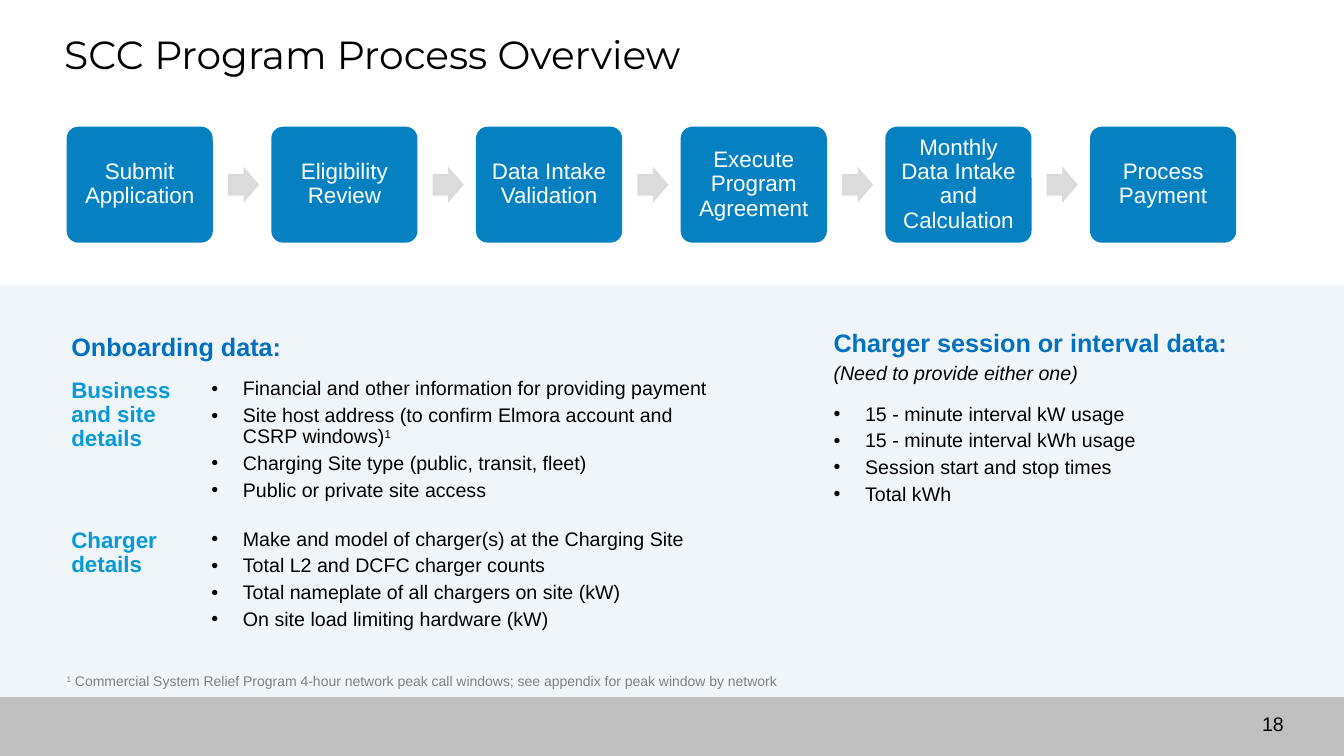
"""Build the SCC program process overview slide."""
from dataclasses import dataclass
from typing import Optional

from lxml import etree
from pptx import Presentation
from pptx.dml.color import RGBColor
from pptx.enum.shapes import MSO_SHAPE
from pptx.enum.text import MSO_ANCHOR, MSO_AUTO_SIZE, PP_ALIGN
from pptx.oxml.ns import qn
from pptx.util import Pt

RECTANGLE = MSO_SHAPE.RECTANGLE
ROUNDED = MSO_SHAPE.ROUNDED_RECTANGLE
RIGHT_ARROW = MSO_SHAPE.RIGHT_ARROW
TOP = MSO_ANCHOR.TOP
MIDDLE = MSO_ANCHOR.MIDDLE
LEFT = PP_ALIGN.LEFT
CENTER = PP_ALIGN.CENTER
NO_FIT = MSO_AUTO_SIZE.NONE


@dataclass(frozen=True)
class Style:
    """Describe the look of a run."""
    size: float
    color: str
    bold: bool = False
    italic: bool = False
    font: str = "Arial"


@dataclass(frozen=True)
class Theme:
    """Hold the colours and type styles of the slide."""
    panel: str = "F0F5F9"
    footer: str = "BFBFBF"
    card: str = "0581C1"
    arrow: str = "DBDBDB"
    title: Style = Style(28, "000000", font="Montserrat")
    step: Style = Style(16, "FFFFFF")
    heading: Style = Style(18, "0070C0", bold=True)
    label: Style = Style(16, "069BD7", bold=True)
    body: Style = Style(14, "000000")
    remark: Style = Style(14, "000000", italic=True)
    footnote: Style = Style(10, "808080")


@dataclass(frozen=True)
class Frame:
    """Give a position and size in points."""
    left: float
    top: float
    width: float
    height: float


@dataclass(frozen=True)
class Block:
    """Describe a text block, with raised text between carets."""
    frame: Frame
    lines: tuple
    styles: tuple
    bulleted: bool = False
    holder: Optional[int] = None


THEME = Theme()
INDENT = 22.5
CARD = Frame(47.6, 90.5, 104.4, 82.8)
ARROW = Frame(CARD.left + 115.2, 119, 22.3, 25.9)
STEP_PITCH = 146.2
LABEL_LEFT, LIST_LEFT, SESSION_LEFT = 51, 151, 595.4
BUSINESS_TOP, CHARGER_TOP = 270.7, 378

STEPS = ("Submit Application", "Eligibility Review", "Data Intake Validation",
         "Execute Program Agreement", "Monthly Data Intake and Calculation",
         "Process Payment")

BLOCKS = (
    Block(Frame(LABEL_LEFT, 239, 451.4, 19.4), ("Onboarding data:",), (THEME.heading,)),
    Block(Frame(SESSION_LEFT, 236.5, 304.6, 38.9),
          ("Charger session or interval data:", "(Need to provide either one)"),
          (THEME.heading, THEME.remark), holder=3),
    Block(Frame(LIST_LEFT, BUSINESS_TOP, 360.7, 88.6),
          ("Financial and other information for providing payment",
           "Site host address (to confirm Elmora account and CSRP windows)^1^",
           "Charging Site type (public, transit, fleet)",
           "Public or private site access"),
          (THEME.body,), bulleted=True, holder=1),
    Block(Frame(LABEL_LEFT, BUSINESS_TOP, 95.8, 52.6),
          ("Business and site details",), (THEME.label,)),
    Block(Frame(SESSION_LEFT, 288.7, 304.6, 73.4),
          ("15 - minute interval kW usage", "15 - minute interval kWh usage",
           "Session start and stop times", "Total kWh"),
          (THEME.body,), bulleted=True, holder=4),
    Block(Frame(LIST_LEFT, CHARGER_TOP, 360.7, 73.4),
          ("Make and model of charger(s) at the Charging Site",
           "Total L2 and DCFC charger counts",
           "Total nameplate of all chargers on site (kW)",
           "On site load limiting hardware (kW)"),
          (THEME.body,), bulleted=True, holder=2),
    Block(Frame(LABEL_LEFT, CHARGER_TOP, 95.8, 34.6), ("Charger details",), (THEME.label,)),
    Block(Frame(47.6, 481.6, 876.2, 10.8),
          ("^1^ Commercial System Relief Program 4-hour network peak call windows; "
           "see appendix for peak window by network",), (THEME.footnote,)),
    Block(Frame(901.5, 510.5, 24, 17), ("18",), (THEME.body,)),
)


def place(shape, frame: Frame) -> None:
    """Move and size a shape."""
    shape.left, shape.top = Pt(frame.left), Pt(frame.top)
    shape.width, shape.height = Pt(frame.width), Pt(frame.height)


def set_margins(text_frame, horizontal: float, vertical: float) -> None:
    """Set the insets, wrapping and fixed size of a text frame."""
    text_frame.margin_left = text_frame.margin_right = Pt(horizontal)
    text_frame.margin_top = text_frame.margin_bottom = Pt(vertical)
    text_frame.word_wrap = True
    text_frame.auto_size = NO_FIT


def format_span(span, style: Style) -> None:
    """Apply a style to a run."""
    font = span.font
    font.name, font.size = style.font, Pt(style.size)
    font.bold, font.italic = style.bold, style.italic
    font.color.rgb = RGBColor.from_string(style.color)


def add_bullet(para, color: str) -> None:
    """Give a paragraph a hanging bullet."""
    properties = para._p.get_or_add_pPr()
    properties.set("marL", str(Pt(INDENT)))
    properties.set("indent", str(-Pt(INDENT)))
    fill = etree.SubElement(properties, qn("a:buClr"))
    etree.SubElement(fill, qn("a:srgbClr")).set("val", color)
    etree.SubElement(properties, qn("a:buFont")).set("typeface", "Arial")
    etree.SubElement(properties, qn("a:buChar")).set("char", "•")


def fill_para(para, line: str, style: Style) -> None:
    """Write a line as runs, raising the text between carets."""
    for position, text in enumerate(line.split("^")):
        if text:
            span = para.add_run()
            span.text = text
            format_span(span, style)
            if position % 2:
                span._r.get_or_add_rPr().set("baseline", "30000")


def draw_block(page, block: Block) -> None:
    """Write a text block into its placeholder or a new text box."""
    if block.holder is None:
        box = page.shapes.add_textbox(0, 0, 0, 0)
    else:
        box = page.placeholders[block.holder]
    place(box, block.frame)
    text_frame = box.text_frame
    set_margins(text_frame, 0, 0)
    text_frame.vertical_anchor = TOP
    for position, line in enumerate(block.lines):
        para = text_frame.add_paragraph() if position else text_frame.paragraphs[0]
        style = block.styles[min(position, len(block.styles) - 1)]
        if block.bulleted:
            add_bullet(para, style.color)
        para.alignment, para.line_spacing = LEFT, 0.9
        para.space_before, para.space_after = Pt(4 if position else 0), Pt(0)
        fill_para(para, line, style)


def draw_shape(page, kind, frame: Frame, color: str, adjustments: tuple = ()):
    """Draw a flat filled shape."""
    shape = page.shapes.add_shape(kind, 0, 0, 0, 0)
    place(shape, frame)
    shape.shadow.inherit = False
    shape.fill.solid()
    shape.fill.fore_color.rgb = RGBColor.from_string(color)
    shape.line.fill.background()
    for position, value in enumerate(adjustments):
        shape.adjustments[position] = value
    return shape


def draw_step(page, position: int, label: str) -> None:
    """Draw a process card and the arrow to the next one."""
    shift = position * STEP_PITCH
    frame = Frame(CARD.left + shift, CARD.top, CARD.width, CARD.height)
    card = draw_shape(page, ROUNDED, frame, THEME.card, (0.1,))
    set_margins(card.text_frame, 7.2, 7.2)
    card.text_frame.vertical_anchor = MIDDLE
    card.text_frame.text = label
    para = card.text_frame.paragraphs[0]
    para.alignment, para.line_spacing = CENTER, 0.9
    format_span(para.runs[0], THEME.step)
    if position < len(STEPS) - 1:
        frame = Frame(ARROW.left + shift, ARROW.top, ARROW.width, ARROW.height)
        draw_shape(page, RIGHT_ARROW, frame, THEME.arrow, (0.6, 0.5))


def draw_title(page) -> None:
    """Write the slide title."""
    title = page.shapes.title
    place(title, Frame(36, 20.2, 888, 72))
    set_margins(title.text_frame, 9.9, 5)
    title.text_frame.vertical_anchor = TOP
    title.text_frame.text = "SCC Program Process Overview"
    para = title.text_frame.paragraphs[0]
    para.alignment, para.line_spacing = LEFT, 0.9
    format_span(para.runs[0], THEME.title)


def main() -> None:
    """Build and save the deck."""
    deck = Presentation()
    deck.slide_width, deck.slide_height = Pt(960), Pt(540)
    page = deck.slides.add_slide(deck.slide_layouts[4])
    for frame, color in ((Frame(0, 204.5, 960, 293.5), THEME.panel),
                         (Frame(0, 497.7, 960, 42.3), THEME.footer)):
        band = draw_shape(page, RECTANGLE, frame, color)
        band.element.getparent().insert(2, band.element)
    draw_title(page)
    for position, label in enumerate(STEPS):
        draw_step(page, position, label)
    for block in BLOCKS:
        draw_block(page, block)
    deck.save("out.pptx")


if __name__ == "__main__":
    main()
